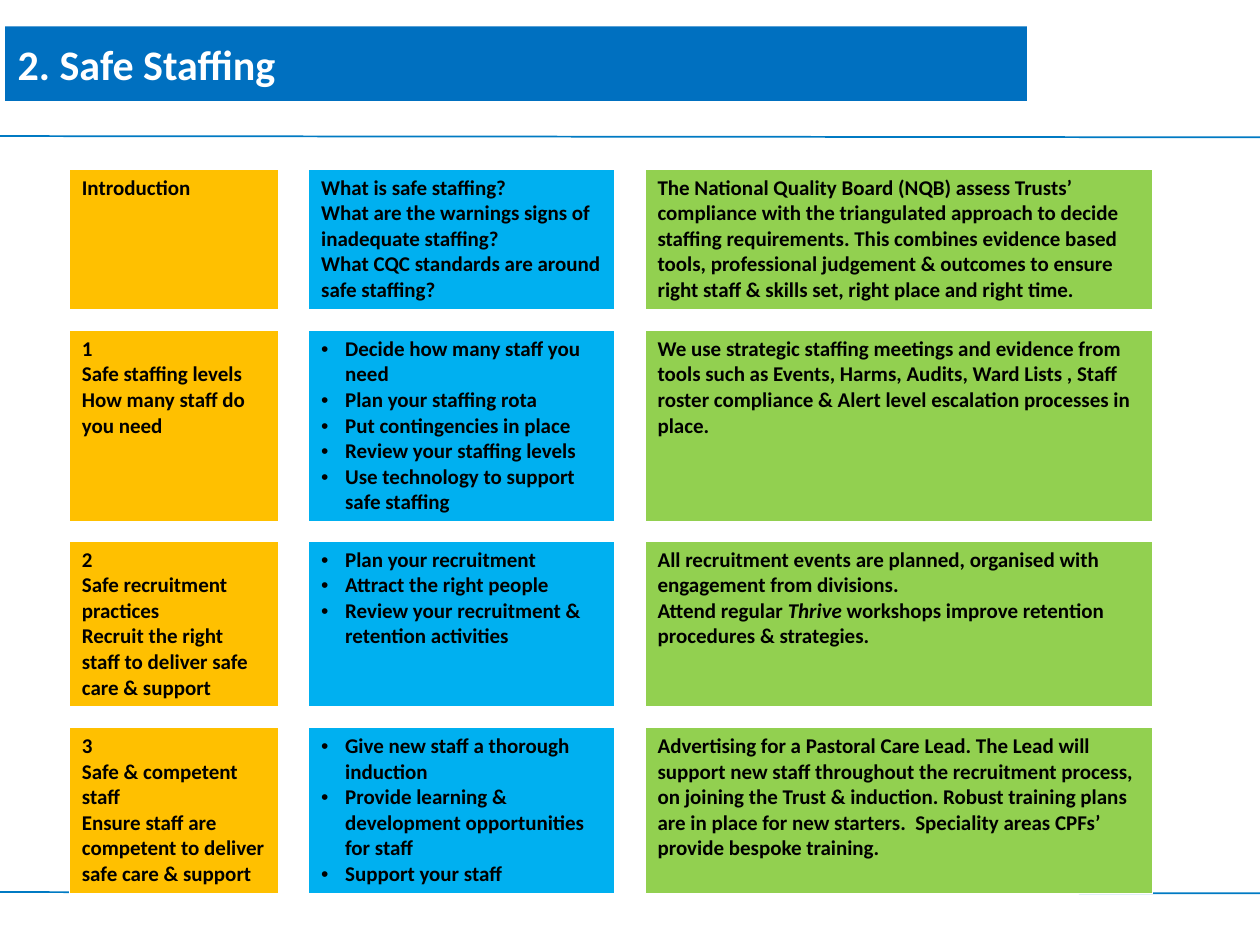
from lxml import etree
from pptx import Presentation
from pptx.dml.color import RGBColor
from pptx.enum.shapes import MSO_CONNECTOR
from pptx.enum.text import MSO_ANCHOR, PP_ALIGN
from pptx.oxml.ns import qn
from pptx.util import Inches, Pt

LINE = MSO_CONNECTOR.STRAIGHT
MID = MSO_ANCHOR.MIDDLE
LEFT = PP_ALIGN.LEFT
FONT = "Calibri"
COLS = [1.66, 0.23, 2.43, 0.24, 4.03]
ROWS = [1.12, 0.16, 1.52, 0.15, 1.32, 0.16, 1.32]
FILLS = ["FFC000", "00B0F0", "92D050"]

# Each row holds three cells, each cell its paragraphs; *marks* set italics.
TEXT = [
    [
        ["Introduction"],
        ["What is safe staffing?",
         "What are the warnings signs of inadequate staffing?",
         "What CQC standards are around safe staffing?"],
        ["The National Quality Board (NQB) assess Trusts’ compliance with the "
         "triangulated approach to decide staffing requirements. This combines "
         "evidence based tools, professional judgement & outcomes to ensure "
         "right staff & skills set, right place and right time."],
    ],
    [
        ["1", "Safe staffing levels", "How many staff do you need"],
        ["Decide how many staff you need",
         "Plan your staffing rota",
         "Put contingencies in place",
         "Review your staffing levels",
         "Use technology to support safe staffing"],
        ["We use strategic staffing meetings and evidence from tools such as "
         "Events, Harms, Audits, Ward Lists , Staff roster compliance & Alert "
         "level escalation processes in place."],
    ],
    [
        ["2", "Safe recruitment practices",
         "Recruit the right staff to deliver safe care & support"],
        ["Plan your recruitment",
         "Attract the right people",
         "Review your recruitment & retention activities"],
        ["All recruitment events are planned, organised with engagement from "
         "divisions.",
         "Attend regular *Thrive* workshops improve retention procedures & "
         "strategies."],
    ],
    [
        ["3", "Safe & competent staff",
         "Ensure staff are competent to deliver safe care & support"],
        ["Give new staff a thorough induction",
         "Provide learning & development opportunities for staff",
         "Support your staff"],
        ["Advertising for a Pastoral Care Lead. The Lead will support new staff "
         "throughout the recruitment process, on joining the Trust & induction. "
         "Robust training plans are in place for new starters.  Speciality "
         "areas CPFs’ provide bespoke training."],
    ],
]


def paint(fill, tint):
    fill.solid()
    fill.fore_color.rgb = RGBColor.from_string(tint)


def write(para, text, size, tint):
    """Add runs to a paragraph, with every second *part* in italics."""
    for i, part in enumerate(text.split("*")):
        run = para.add_run()
        run.text = part
        font = run.font
        font.name, font.size, font.bold = FONT, Pt(size), True
        font.italic = i % 2 == 1
        paint(font.fill, tint)


deck = Presentation()
deck.slide_width, deck.slide_height = Inches(10), Inches(7.5)
slide = deck.slides.add_slide(deck.slide_layouts[5])

# Rules above and below the table
for top in (1.08, 7.08):
    rule = slide.shapes.add_connector(
        LINE, 0, Inches(top), deck.slide_width, Inches(top + 0.01))
    paint(rule.line.fill, "007AC3")
    rule.line.width = Pt(1)
    etree.SubElement(rule._element.spPr, qn("a:effectLst"))

# Title bar
title = slide.shapes.title
title.left, title.top = Inches(0.04), Inches(0.21)
title.width, title.height = Inches(8.11), Inches(0.59)
paint(title.fill, "0070C0")
title.text_frame.vertical_anchor = MID
para = title.text_frame.paragraphs[0]
para.alignment = LEFT
write(para, "2. Safe Staffing", 24, "FFFFFF")

# Table: even rows and columns hold text, odd ones are white gaps
frame = slide.shapes.add_table(
    len(ROWS), len(COLS), Inches(0.55), Inches(1.34),
    Inches(sum(COLS)), Inches(sum(ROWS)))
table = frame.table
table.first_row = table.horz_banding = False
for col, wide in zip(table.columns, COLS):
    col.width = Inches(wide)
for row, high in zip(table.rows, ROWS):
    row.height = Inches(high)

for r in range(len(ROWS)):
    for c in range(len(COLS)):
        cell = table.cell(r, c)
        if r % 2 or c % 2:
            paint(cell.fill, "FFFFFF")
            cell.margin_top = cell.margin_bottom = 0
            end = etree.SubElement(
                cell.text_frame.paragraphs[0]._p, qn("a:endParaRPr"))
            end.set("sz", "400")
            continue
        paint(cell.fill, FILLS[c // 2])
        body = cell.text_frame
        for i, text in enumerate(TEXT[r // 2][c // 2]):
            para = body.add_paragraph() if i else body.paragraphs[0]
            if c == 2 and r:
                props = para._p.get_or_add_pPr()
                props.set("marL", str(Inches(0.19)))
                props.set("indent", str(-Inches(0.19)))
                face = etree.SubElement(props, qn("a:buFont"))
                face.set("typeface", "Arial")
                etree.SubElement(props, qn("a:buChar")).set("char", "•")
            write(para, text, 12, "000000")

deck.save("out.pptx")
